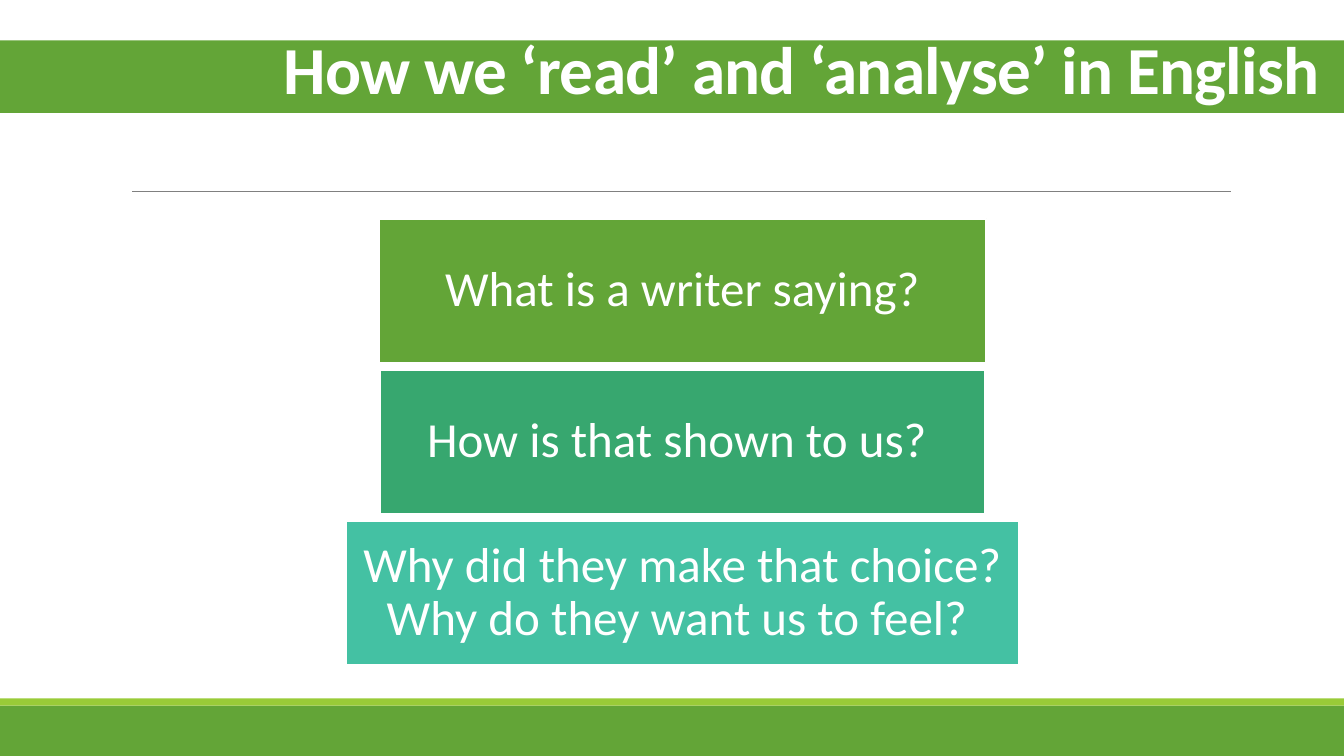
from lxml.etree import SubElement
from pptx import Presentation
from pptx.dml.color import RGBColor
from pptx.enum.shapes import MSO_CONNECTOR as Connector, MSO_SHAPE as Shape
from pptx.enum.text import MSO_ANCHOR as Anchor, MSO_AUTO_SIZE as AutoSize, PP_ALIGN as Align
from pptx.oxml.ns import qn
from pptx.util import Inches, Pt

GREEN, LIME, WHITE = "63A537", "99CB38", "FFFFFF"
SLIDE_WIDTH = 13.33


def paint(fill, color):
    fill.solid()
    fill.fore_color.rgb = RGBColor.from_string(color)


def write(box, text, size, align, anchor, line_spacing, bold=False, tracking=0):
    """Fill a shape with one white paragraph; tracking is in hundredths of a point."""
    frame = box.text_frame
    frame.word_wrap = True
    frame.auto_size = AutoSize.NONE
    frame.vertical_anchor = anchor
    para = frame.paragraphs[0]
    para.alignment = align
    para.line_spacing = line_spacing
    span = para.add_run()
    span.text = text
    span.font.name = "Calibri"
    span.font.size = Pt(size)
    span.font.bold = bold
    paint(span.font.fill, WHITE)
    if tracking:
        span.font._element.set("spc", str(tracking))


deck = Presentation()
deck.slide_width, deck.slide_height = Inches(SLIDE_WIDTH), Inches(7.5)
page = deck.slides.add_slide(deck.slide_layouts[5])

# Footer bands
for top, height, color in [(7, 0.5, GREEN), (6.93, 0.07, LIME)]:
    band = page.shapes.add_shape(Shape.RECTANGLE, 0, Inches(top), Inches(SLIDE_WIDTH), Inches(height))
    band.shadow.inherit = False
    paint(band.fill, color)
    band.line.fill.background()

# Rule under the title
rule = page.shapes.add_connector(Connector.STRAIGHT, Inches(1.31), Inches(1.9), Inches(12.21), Inches(1.9))
paint(rule.line.fill, "808080")
rule.line.width = Pt(0.5)
SubElement(rule._element.spPr, qn("a:effectLst"))

# Title banner
title = page.shapes.title
title.left, title.top = Inches(0), Inches(0.4)
title.width, title.height = Inches(SLIDE_WIDTH), Inches(0.72)
paint(title.fill, GREEN)
write(title, "How we ‘read’ and ‘analyse’ in English\u00a0", 48, Align.RIGHT, Anchor.BOTTOM, 0.85,
      bold=True, tracking=-50)

# Stacked question boxes, centred on one axis
questions = [
    ("What is a writer saying?", 6.02, GREEN),
    ("How is that shown to us? ", 6, "37A76F"),
    ("Why did they make that choice? Why do they want us to feel? ", 6.67, "44C1A3"),
]
for row, (question, width, color) in enumerate(questions):
    box = page.shapes.add_shape(Shape.RECTANGLE, Inches(6.77 - width / 2), Inches(2.17 + 1.5 * row),
                                Inches(width), Inches(1.43))
    box.shadow.inherit = False
    paint(box.fill, color)
    paint(box.line.fill, WHITE)
    box.line.width = Pt(1.25)
    frame = box.text_frame
    frame.margin_left = frame.margin_right = frame.margin_top = frame.margin_bottom = Inches(0.1)
    write(box, question, 35, Align.CENTER, Anchor.MIDDLE, 0.9)

deck.save("out.pptx")
